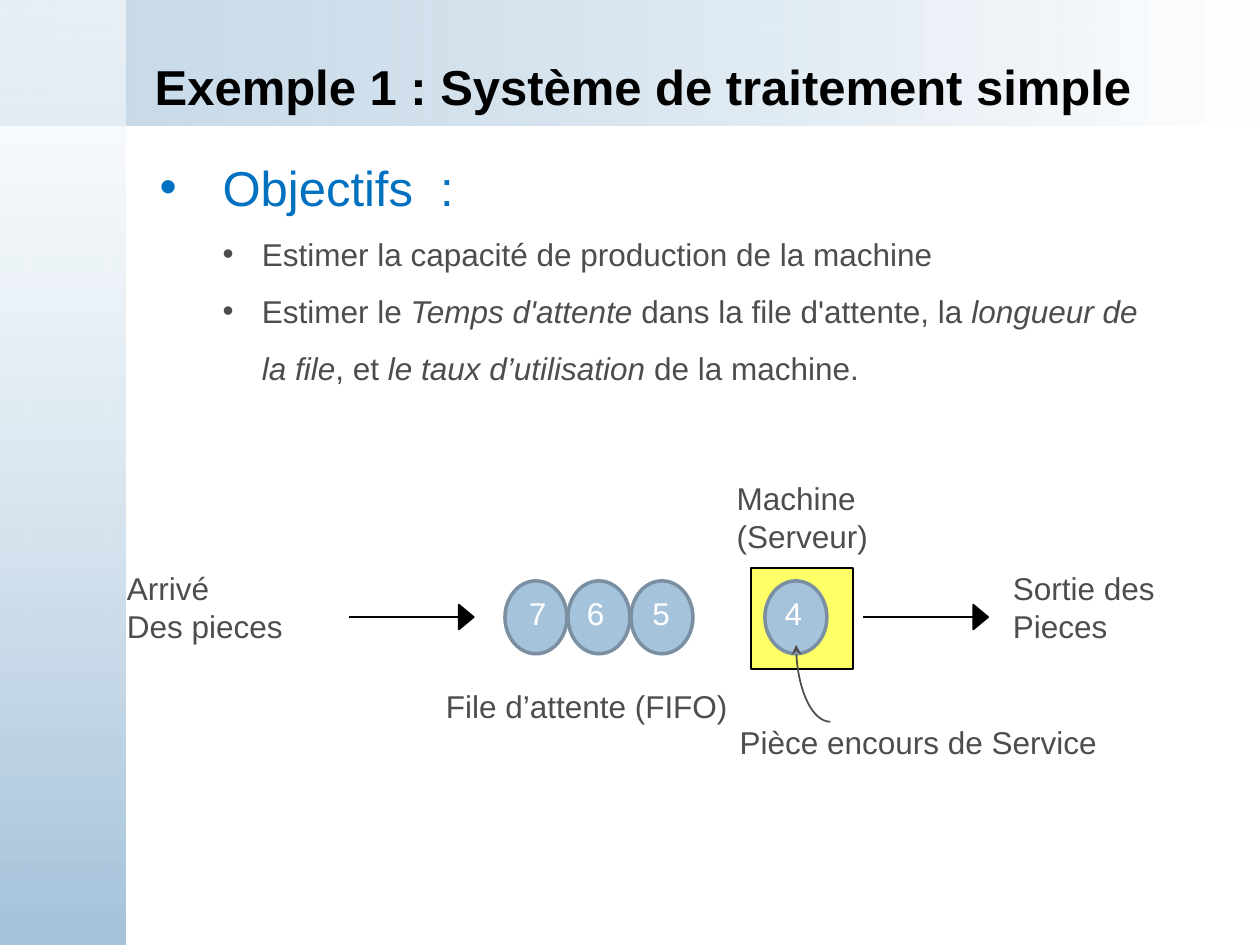
from math import cos, pi, sin

from lxml.etree import SubElement
from pptx import Presentation
from pptx.dml.color import RGBColor
from pptx.enum.shapes import MSO_CONNECTOR, MSO_SHAPE
from pptx.enum.text import MSO_ANCHOR
from pptx.oxml.ns import qn
from pptx.util import Cm, Pt

BLACK = RGBColor(0, 0, 0)
WHITE = RGBColor(255, 255, 255)
GREY = RGBColor(0x4D, 0x4D, 0x4D)
BLUE = RGBColor(0x00, 0x70, 0xC0)
PALE = RGBColor(0xA5, 0xC3, 0xDB)
STEEL = RGBColor(0x7A, 0x90, 0xA2)
YELLOW = RGBColor(0xFF, 0xFF, 0x66)


class Board:
    face = "Arial"
    size = 18

    def __init__(self, slide):
        self.shapes = slide.shapes

    def style(self, font, color, size=None, bold=False):
        font.name = self.face
        font.size = Pt(size or self.size)
        font.color.rgb = color
        font.bold = bold

    def shape(self, kind, place, fill, edge, width):
        item = self.shapes.add_shape(kind, *map(Cm, place))
        item.shadow.inherit = False
        item.fill.solid()
        item.fill.fore_color.rgb = fill
        item.line.color.rgb = edge
        item.line.width = Pt(width)

    def band(self, place, colors, angle, alpha):
        item = self.shapes.add_shape(MSO_SHAPE.RECTANGLE, *map(Cm, place))
        item.shadow.inherit = False
        item.line.fill.background()
        item.fill.gradient()
        item.fill.gradient_angle = angle
        for stop, color in zip(item.fill.gradient_stops, colors):
            stop.color.rgb = color
        first = item._element.xpath(".//a:gs/a:srgbClr")[0]
        SubElement(first, qn("a:alpha"), val=str(alpha * 1000))

    def text(self, place, words, color=GREY, size=None, bold=False):
        frame = self.shapes.add_textbox(*map(Cm, place)).text_frame
        frame.word_wrap = True
        frame.text = words
        for para in frame.paragraphs:
            for run in para.runs:
                self.style(run.font, color, size, bold)
        return frame

    def bullet(self, para, left, hang):
        props = para._p.get_or_add_pPr()
        props.set("marL", str(Cm(left)))
        props.set("indent", str(-Cm(hang)))
        SubElement(props, qn("a:buFont"), typeface=self.face)
        SubElement(props, qn("a:buChar"), char="•")

    def point(self, frame, parts):
        para = frame.add_paragraph()
        para.level = 1
        para.line_spacing = 1.5
        self.bullet(para, 2.06, 0.79)
        for words, slant in parts:
            run = para.add_run()
            run.text = words
            self.style(run.font, GREY)
            run.font.italic = slant

    def outline(self, dots, color, closed):
        dots = [(Cm(x), Cm(y)) for x, y in dots]
        pen = self.shapes.build_freeform(*dots[0])
        pen.add_line_segments(dots[1:], close=closed)
        item = pen.convert_to_shape()
        item.shadow.inherit = False
        item.line.color.rgb = color
        item.line.width = Pt(1)
        if closed:
            item.fill.solid()
            item.fill.fore_color.rgb = color
        else:
            item.fill.background()
        return item

    def arrow(self, x, y):
        ends = map(Cm, (x, y, x + 2.29, y))
        line = self.shapes.add_connector(MSO_CONNECTOR.STRAIGHT, *ends)
        line.line.color.rgb = BLACK
        line.line.width = Pt(1)
        SubElement(line._element.spPr, qn("a:effectLst"))
        base = x + 2.22
        head = [(base, y - 0.25), (base, y + 0.25), (base + 0.3, y)]
        self.outline(head, BLACK, True)

    def curve(self, x, y, wide, high, steps=24):
        turns = [pi / 2 * (1 + i / steps) for i in range(steps + 1)]
        dots = [(x + wide * cos(t), y + high * sin(t)) for t in turns]
        item = self.outline(dots, GREY, False)
        SubElement(item.line._get_or_add_ln(), qn("a:tailEnd"), type="stealth")


def main():
    deck = Presentation()
    deck.slide_width, deck.slide_height = Cm(25.4), Cm(19.05)
    board = Board(deck.slides.add_slide(deck.slide_layouts[6]))

    board.band((0, 0, 25.4, 2.54), (PALE, WHITE), 0, 62)
    board.band((0, 0, 2.54, 19.05), (WHITE, PALE), 270, 59)
    title = board.text((2.87, 1.12, 21.46, 1.24),
                       "Exemple 1 : Système de traitement simple", BLACK, 28, True)
    title.vertical_anchor = MSO_ANCHOR.MIDDLE

    board.shape(MSO_SHAPE.RECTANGLE, (15.14, 11.45, 2.06, 2.04), YELLOW, BLACK, 1)
    parts = (("4", 15.42, 15.57), ("5", 12.72, 12.9),
             ("6", 11.45, 11.58), ("7", 10.18, 10.41))
    for _, x, _ in parts:
        board.shape(MSO_SHAPE.OVAL, (x, 11.71, 1.25, 1.47), PALE, STEEL, 2)
    for x in (7.03, 17.4):
        board.arrow(x, 12.44)

    for place, words in (
        ((2.31, 11.35, 3.68, 1.8), "Arrivé\nDes pieces"),
        ((20.17, 11.35, 3.58, 1.8), "Sortie des\nPieces"),
        ((14.6, 9.53, 3.5, 2.21), "Machine\n(Serveur)"),
        ((8.74, 13.72, 6.86, 1.27), "File d’attente (FIFO)"),
        ((14.66, 14.45, 8.53, 1.27), "Pièce encours de Service"),
    ):
        board.text(place, words)
    board.curve(16.74, 13, 0.69, 1.55)
    for digit, _, x in parts:
        board.text((x, 11.86, 0.97, 1.24), digit, WHITE)

    goals = board.text((2.97, 3.05, 20.75, 4.93), "Objectifs  :", BLUE, 28)
    board.bullet(goals.paragraphs[0], 1.27, 1.27)
    board.point(goals, [("Estimer la capacité de production de la machine", False)])
    board.point(goals, [
        ("Estimer le ", False), ("Temps d'attente ", True),
        ("dans la file d'attente, la ", False), ("longueur de la file", True),
        (", et ", False), ("le taux d’utilisation ", True),
        ("de la machine.", False),
    ])
    deck.save("out.pptx")


if __name__ == "__main__":
    main()
